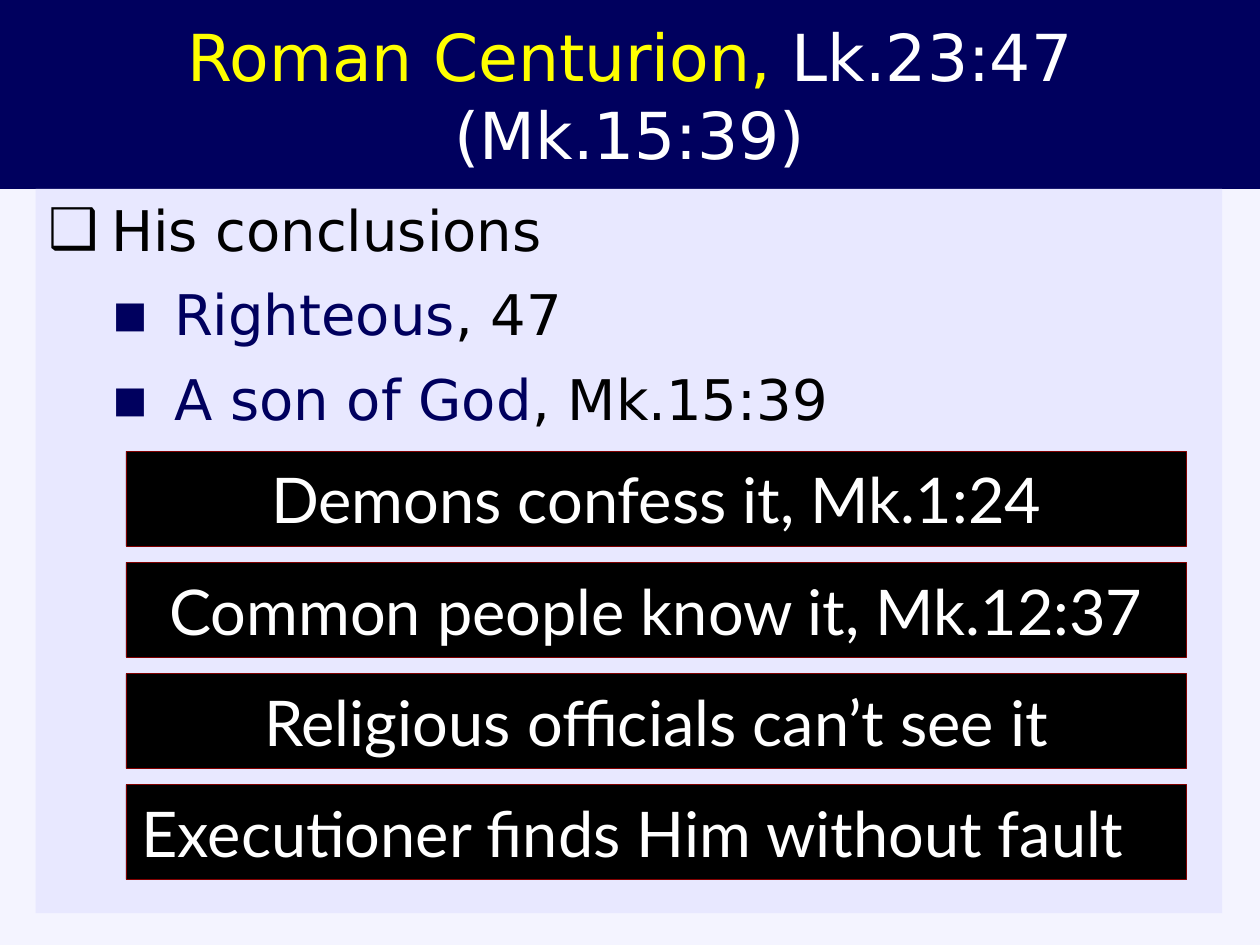
from lxml import etree
from pptx import Presentation
from pptx.dml.color import RGBColor
from pptx.enum.shapes import MSO_SHAPE
from pptx.enum.text import MSO_ANCHOR, PP_ALIGN
from pptx.oxml.ns import qn
from pptx.util import Cm, Pt

RECT = MSO_SHAPE.RECTANGLE
TOP, MIDDLE = MSO_ANCHOR.TOP, MSO_ANCHOR.MIDDLE
LEFT, CENTER = PP_ALIGN.LEFT, PP_ALIGN.CENTER

NAVY = RGBColor(0x00, 0x00, 0x5E)
YELLOW = RGBColor(0xFF, 0xFF, 0x00)
WHITE = RGBColor(0xFF, 0xFF, 0xFF)
BLACK = RGBColor(0x00, 0x00, 0x00)
MAROON = RGBColor(0x80, 0x00, 0x00)
PALE = RGBColor(0xF4, 0xF4, 0xFF)
LILAC = RGBColor(0xE8, 0xE8, 0xFF)

SANS, LATO = "DejaVu Sans", "Lato"
INDENT = Cm(1.27)

POINTS = [
    (0, "❑", [("His conclusions", BLACK)]),
    (1, "▪", [("Righteous", NAVY), (", 47", BLACK)]),
    (1, "▪", [("A son of God", NAVY), (", Mk.15:39", BLACK)]),
]
CLAIMS = [
    "Demons confess it, Mk.1:24",
    "Common people know it, Mk.12:37",
    "Religious officials can’t see it",
    "Executioner finds Him without fault",
]


def add_box(slide, left, top, width, height, fill, anchor):
    """Add a plain filled rectangle; lengths are in centimetres."""
    box = slide.shapes.add_shape(RECT, Cm(left), Cm(top), Cm(width), Cm(height))
    box.shadow.inherit = False
    box.fill.solid()
    box.fill.fore_color.rgb = fill
    box.line.fill.background()
    box.text_frame.word_wrap = True
    box.text_frame.vertical_anchor = anchor
    return box


def add_runs(para, parts, size, font, align):
    para.alignment = align
    for text, color in parts:
        run = para.add_run()
        run.text = text
        run.font.size = Pt(size)
        run.font.name = font
        run.font.color.rgb = color


def set_bullet(para, level, mark):
    para.level = level
    props = para._p.get_or_add_pPr()
    props.set("marL", str(INDENT * (level + 1)))
    props.set("indent", str(-INDENT))
    etree.SubElement(props, qn("a:buFont"), typeface=SANS)
    etree.SubElement(props, qn("a:buChar"), char=mark)


def add_title(slide):
    box = add_box(slide, 0, 0, 25.4, 3.81, NAVY, MIDDLE)
    parts = [("Roman Centurion, ", YELLOW), ("Lk.23:47 (Mk.15:39)", WHITE)]
    add_runs(box.text_frame.paragraphs[0], parts, 37, SANS, CENTER)


def add_points(slide):
    frame = add_box(slide, 0.72, 3.81, 23.92, 14.6, LILAC, TOP).text_frame
    for row, (level, mark, parts) in enumerate(POINTS):
        para = frame.add_paragraph() if row else frame.paragraphs[0]
        para.space_after = Pt(10)
        set_bullet(para, level, mark)
        add_runs(para, parts, 32, SANS, LEFT)


def add_claims(slide):
    for row, claim in enumerate(CLAIMS):
        box = add_box(slide, 2.54, 9.1 + 2.24 * row, 21.38, 1.91, BLACK, MIDDLE)
        box.line.color.rgb = MAROON
        box.line.width = Pt(0.5)
        add_runs(box.text_frame.paragraphs[0], [(claim, WHITE)], 36, LATO, CENTER)
    # The last claim sits a little left of centre
    box.text_frame.margin_right = Cm(1.2)


def main():
    deck = Presentation()
    deck.slide_width, deck.slide_height = Cm(25.4), Cm(19.05)
    slide = deck.slides.add_slide(deck.slide_layouts[6])
    slide.background.fill.solid()
    slide.background.fill.fore_color.rgb = PALE
    add_title(slide)
    add_points(slide)
    add_claims(slide)
    deck.save("out.pptx")


if __name__ == "__main__":
    main()
